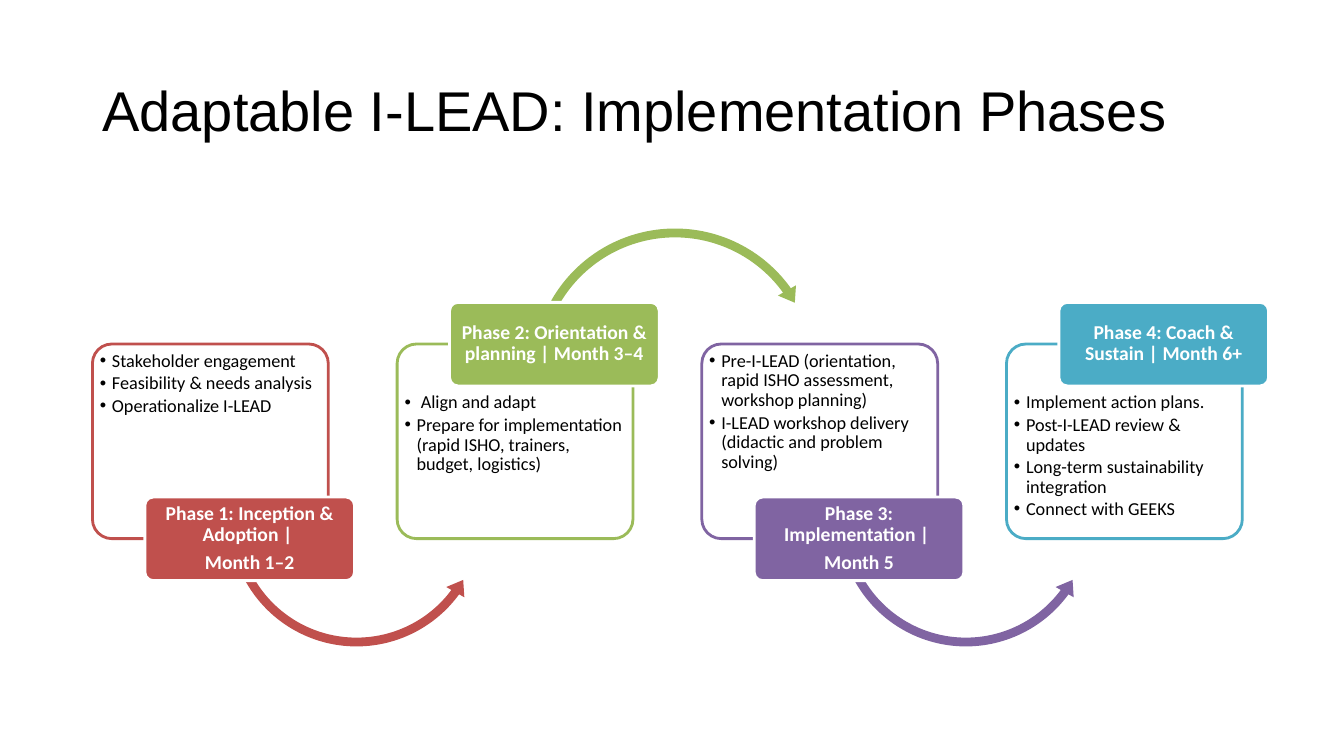
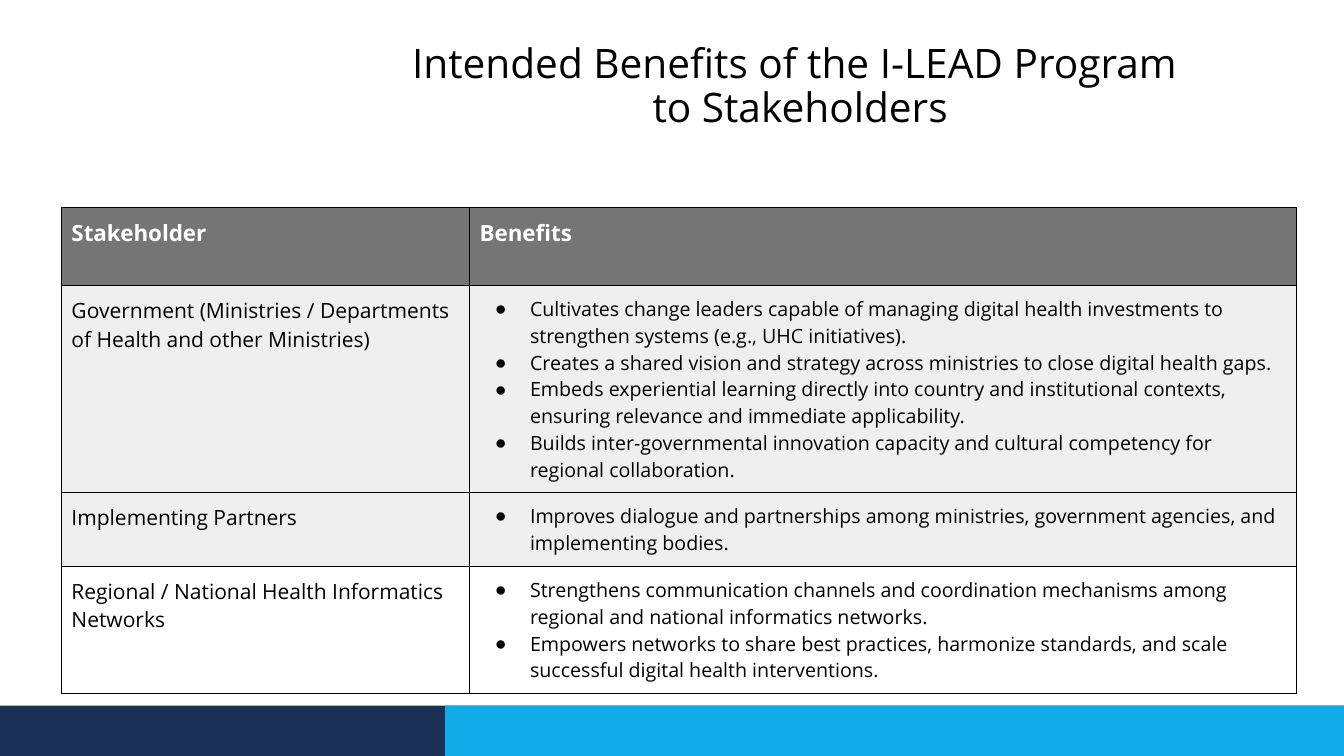
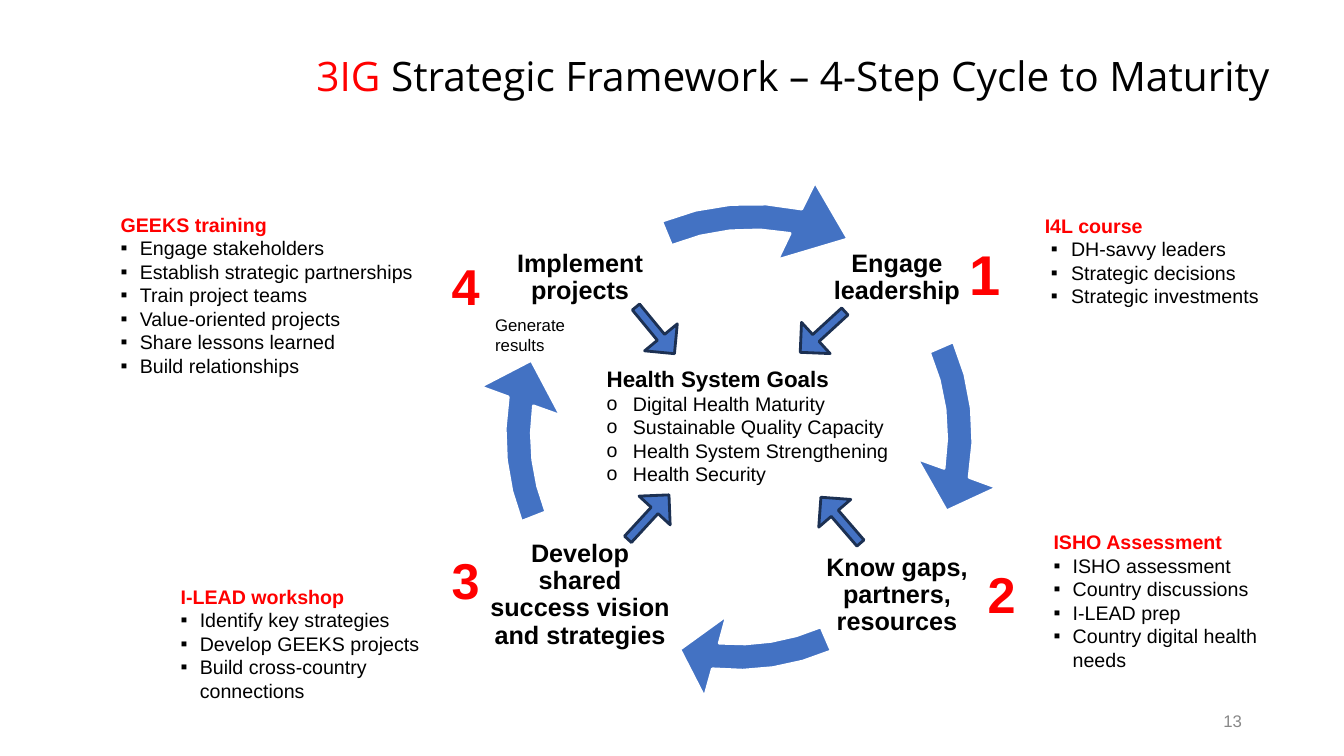
from math import cos, radians, sin

from lxml import etree
from pptx import Presentation
from pptx.dml.color import RGBColor
from pptx.enum.shapes import MSO_SHAPE
from pptx.enum.text import MSO_ANCHOR, PP_ALIGN
from pptx.oxml.ns import qn
from pptx.util import Inches, Pt

RECTANGLE = MSO_SHAPE.RECTANGLE
ROUNDED = MSO_SHAPE.ROUNDED_RECTANGLE
RIGHT_ARROW = MSO_SHAPE.RIGHT_ARROW
ARC_OVER = MSO_SHAPE.CIRCULAR_ARROW
ARC_UNDER = MSO_SHAPE.LEFT_CIRCULAR_ARROW
TOP, MIDDLE, BOTTOM = MSO_ANCHOR.TOP, MSO_ANCHOR.MIDDLE, MSO_ANCHOR.BOTTOM
LEFT, CENTER, RIGHT = PP_ALIGN.LEFT, PP_ALIGN.CENTER, PP_ALIGN.RIGHT

WIDTH, HEIGHT = Inches(13.33), Inches(7.5)
COLOURS = {
    "black": "000000", "white": "FFFFFF", "red": "FF0000", "number": "888888",
    "phase 1": "C0504D", "phase 2": "9BBB59", "phase 3": "8064A2", "phase 4": "4BACC6",
    "navy": "1B3055", "sky": "10ABE9", "header": "757575", "row": "EFEFEF",
    "ring": "4372C3", "cycle": "4472C4", "outline": "1C3052",
}
INSETS = (0.1, 0.05, 0.1, 0.05)


# ---- shared helpers: all places are percentages of the slide ----

def colour(name):
    return RGBColor.from_string(COLOURS[name])


def across(share):
    return round(WIDTH * share / 100)


def down(share):
    return round(HEIGHT * share / 100)


def place(left, top, width, height):
    return across(left), down(top), across(width), down(height)


def set_margins(holder, insets):
    (holder.margin_left, holder.margin_top,
     holder.margin_right, holder.margin_bottom) = map(Inches, insets)


def set_frame(frame, anchor=TOP, insets=INSETS):
    frame.word_wrap = True
    frame.vertical_anchor = anchor
    set_margins(frame, insets)


def style(para, size, font="Arial", ink="black", bold=False, align=LEFT,
          spacing=1.0, after=0):
    para.alignment = align
    para.line_spacing = spacing
    para.space_after = Pt(after)
    for span in para.runs:
        span.font.size = Pt(size)
        span.font.name = font
        span.font.bold = bold
        span.font.color.rgb = colour(ink)


def add_bullet(para, mark, indent, hang):
    props = para._p.get_or_add_pPr()
    props.set("marL", str(Inches(indent)))
    props.set("indent", str(-Inches(hang)))
    etree.SubElement(props, qn("a:buFont")).set("typeface", "Arial")
    etree.SubElement(props, qn("a:buChar")).set("char", mark)


def write(frame, lines, size, bullet=None, **look):
    frame.text = "\n".join(lines)
    for para in frame.paragraphs:
        style(para, size, **look)
        if bullet:
            add_bullet(para, *bullet)


def add_text(page, at, lines, size, anchor=TOP, insets=INSETS, **look):
    box = page.shapes.add_textbox(*place(*at))
    set_frame(box.text_frame, anchor, insets)
    write(box.text_frame, lines, size, **look)
    return box


def set_fill(fill, name):
    if name:
        fill.solid()
        fill.fore_color.rgb = colour(name)
    else:
        fill.background()


def paint(shape, fill=None, line=None):
    shape.shadow.inherit = False
    set_fill(shape.fill, fill)
    set_fill(shape.line.fill, line)
    if line:
        shape.line.width = Pt(2)


def add_block(page, kind, at, fill, line=None, adjust=()):
    block = page.shapes.add_shape(kind, *place(*at))
    paint(block, fill, line)
    for index, percent in enumerate(adjust):
        block.adjustments[index] = percent / 100
    return block


def add_outline(page, points):
    builder = page.shapes.build_freeform(*points[0])
    builder.add_line_segments(points[1:], close=True)
    return builder.convert_to_shape()


def add_title(page, at, text, size=29, font="Open Sans", anchor=MIDDLE, align=LEFT):
    return add_text(page, at, [text], size, anchor, font=font, align=align, spacing=0.9)


# ---- phases ----

PHASES = [
    (["Phase 1: Inception & Adoption | ", "Month 1–2"],
     ["Stakeholder engagement", "Feasibility & needs analysis", "Operationalize I-LEAD"]),
    (["Phase 2: Orientation & planning | Month 3–4"],
     [" Align and adapt",
      "Prepare for implementation (rapid ISHO, trainers, budget, logistics)"]),
    (["Phase 3: Implementation | ", "Month 5"],
     ["Pre-I-LEAD (orientation, rapid ISHO assessment, workshop planning)",
      "I-LEAD workshop delivery (didactic and problem solving)"]),
    (["Phase 4: Coach & Sustain | Month 6+"],
     ["Implement action plans.", "Post-I-LEAD review & updates",
      "Long-term sustainability integration", "Connect with GEEKS"]),
]


def add_phase(page, index, label, tasks):
    left = 6.88 + index * 22.67
    ink = f"phase {index + 1}"
    label_on_top = index % 2 == 1

    panel = add_block(page, ROUNDED, (left, 45.5, 17.55, 25.75), "white", ink, [10])
    panel_colour = panel.fill._xPr.find(qn("a:solidFill"))[0]
    etree.SubElement(panel_colour, qn("a:alpha"), val="90000")
    tasks_top = 51.6 if label_on_top else 46.1
    add_text(page, (left + 0.33, tasks_top, 16.9, 19.1), tasks, 13, insets=(0.03,) * 4,
             bullet=("•", 0.12, 0.12), font="Calibri", spacing=0.9, after=2)

    # The last phase leads nowhere
    if index < len(PHASES) - 1:
        if label_on_top:
            add_block(page, ARC_OVER, (left + 9.65, 29.45, 22.05, 39.2), ink,
                      adjust=[3, 363.7, 19460.8, 12575.5, 3.5])
        else:
            add_block(page, ARC_UNDER, (left + 9.75, 51.1, 19.8, 35.2), ink,
                      adjust=[3.3, 408.4, 2183.9, 9024.5, 3.9])

    tag_top = 40 if label_on_top else 65.75
    add_block(page, ROUNDED, (left + 3.9, tag_top, 15.6, 11.05), ink, "white", [10])
    add_text(page, (left + 4.1, tag_top + 0.3, 15.2, 10.4), label, 14, MIDDLE,
             (0.03, 0.02, 0.03, 0.02), font="Calibri", ink="white", bold=True,
             align=CENTER, spacing=0.9, after=5)


def build_phases(page):
    add_title(page, (6.88, 5.3, 86.2, 19.3), "Adaptable I-LEAD: Implementation Phases",
              size=40, font="Arial")
    for index, (label, tasks) in enumerate(PHASES):
        add_phase(page, index, label, tasks)


# ---- benefits table ----

BENEFITS = [
    ("Government (Ministries / Departments of Health and other Ministries)", [
        "Cultivates change leaders capable of managing digital health investments to "
        "strengthen systems (e.g., UHC initiatives).",
        "Creates a shared vision and strategy across ministries to close digital health gaps.",
        "Embeds experiential learning directly into country and institutional contexts, "
        "ensuring relevance and immediate applicability.",
        "Builds inter-governmental innovation capacity and cultural competency for "
        "regional collaboration."]),
    ("Implementing Partners", [
        "Improves dialogue and partnerships among ministries, government agencies, and "
        "implementing bodies."]),
    ("Regional / National Health Informatics Networks", [
        "Strengthens communication channels and coordination mechanisms among regional "
        "and national informatics networks.",
        "Empowers networks to share best practices, harmonize standards, and scale "
        "successful digital health interventions."]),
]
COLUMN_SHARES = [30.37, 61.55]
ROW_SHARES = [10.35, 27.35, 9.8, 16.8]


def add_borders(cell):
    props = cell._tc.get_or_add_tcPr()
    for side in ("lnL", "lnR", "lnT", "lnB"):
        line = etree.SubElement(props, qn(f"a:{side}"), w=str(Pt(0.75)))
        fill = etree.SubElement(line, qn("a:solidFill"))
        etree.SubElement(fill, qn("a:srgbClr"), val=COLOURS["black"])


def fill_cell(cell, lines, size, fill, **look):
    add_borders(cell)
    set_fill(cell.fill, fill)
    set_margins(cell, (0.1,) * 4)
    write(cell.text_frame, lines, size, font="Open Sans", **look)


def build_benefits(page):
    add_title(page, (21.4, 3.3, 76.3, 14.75),
              "Intended Benefits of the I-LEAD Program \vto Stakeholders",
              anchor=BOTTOM, align=CENTER)
    # Footer band
    add_block(page, RECTANGLE, (0, 93.33, 100, 6.67), "navy")
    add_block(page, RECTANGLE, (33.12, 93.33, 66.88, 6.67), "sky")

    at = place(4.57, 27.45, sum(COLUMN_SHARES), sum(ROW_SHARES))
    table = page.shapes.add_table(len(ROW_SHARES), len(COLUMN_SHARES), *at).table
    table.horz_banding = False
    for column, share in zip(table.columns, COLUMN_SHARES):
        column.width = across(share)
    for row, share in zip(table.rows, ROW_SHARES):
        row.height = down(share)

    for index, heading in enumerate(["Stakeholder", "Benefits"]):
        fill_cell(table.cell(0, index), [heading], 16, "header", ink="white", bold=True)
    for row, (stakeholder, benefits) in enumerate(BENEFITS, 1):
        fill = "row" if row < len(BENEFITS) else None
        fill_cell(table.cell(row, 0), [stakeholder], 15, fill)
        fill_cell(table.cell(row, 1), benefits, 14, fill, bullet=("●", 0.5, 0.35))


# ---- four-step cycle ----

# Label, its left and top, number, number place, number size
STEPS = [
    ("Engage leadership", 59.8, 24.4, "1", (71.4, 31.05, 3.75, 10.3), 40),
    ("Know gaps, partners, resources", 59.8, 66.4, "2", (72.75, 73.85, 3.3, 9.5), 36),
    ("Develop shared success vision and strategies", 36.22, 66.4, "3",
     (32.87, 72, 3.3, 9.5), 36),
    ("Implement projects", 36.22, 24.4, "4", (32.87, 33.1, 3.3, 9.5), 36),
]
# Place, bullet, heading, items
LISTS = [
    ((77, 27.6, 17.5, 13.9), ("▪", 0.26, 0.2), "I4L course",
     ["DH-savvy leaders", "Strategic decisions", "Strategic investments"]),
    ((77.65, 69.45, 18.4, 21.1), ("▪", 0.19, 0.19), "ISHO Assessment",
     ["ISHO assessment", "Country discussions", "I-LEAD prep",
      "Country digital health needs"]),
    ((12.7, 76.7, 20.2, 17.1), ("▪", 0.19, 0.19), "I-LEAD workshop",
     ["Identify key strategies", "Develop GEEKS projects",
      "Build cross-country connections"]),
    ((8.24, 27.45, 31.2, 23.3), ("▪", 0.19, 0.19), "GEEKS training",
     ["Engage stakeholders", "Establish strategic partnerships", "Train project teams",
      "Value-oriented projects", "Share lessons learned", "Build relationships"]),
]
GOALS = ["Digital Health Maturity", "Sustainable Quality Capacity",
         "Health System Strengthening", "Health Security"]
# Centre in inches, tail and tip angles in degrees, head length factor
RING_ARROWS = [
    (7.32, 4.32, -23.5, 19.9, 1),
    (7.32, 4.32, 66.6, 105.2, 0.93),
    (7.34, 4.32, 158.5, 199.8, 1.08),
    (7.45, 4.35, 247.6, 295.9, 1.4),
]
RING_TOP, RING_SIDE = 1.71, 5.23
# Left, top, rotation
GOAL_ARROWS = [(46.5, 40.9, 50.5), (58.95, 41.1, 137.5), (60.3, 66, 229.2), (46, 65.6, 312.7)]


def arc(radius, start, end, steps=4):
    return [(radius, start + (end - start) * step / steps) for step in range(steps + 1)]


def frame_on_ring(shape, left, top, side):
    """Widen the shape's frame to the whole ring, leaving its outline in place."""
    shift_x, shift_y = shape.left - left, shape.top - top
    outline = shape._element.spPr.find(".//" + qn("a:path"))
    outline.set("w", str(side))
    outline.set("h", str(side))
    for point in outline.iter(qn("a:pt")):
        point.set("x", str(int(point.get("x")) + shift_x))
        point.set("y", str(int(point.get("y")) + shift_y))
    shape.left, shape.top, shape.width, shape.height = left, top, side, side


def add_ring_arrow(page, centre_x, centre_y, tail, tip, head):
    polar = (arc(2.33, tail, tip - 9.6 * head)
             + [(2.62, tip - 8.5 * head), (2.2, tip), (1.79, tip - 12.5 * head)]
             + arc(2.07, tip - 10.8 * head, tail))
    points = [(Inches(centre_x + radius * cos(radians(angle))),
               Inches(centre_y + radius * sin(radians(angle)))) for radius, angle in polar]
    arrow = add_outline(page, points)
    paint(arrow, "ring", "white")
    frame_on_ring(arrow, Inches(centre_x - RING_SIDE / 2), Inches(RING_TOP),
                  Inches(RING_SIDE))


def add_step_label(page, left, top, label):
    x, y, width, height = place(left, top, 13.88, 24.67)
    area = add_outline(page, [(x, y), (x + width, y), (x + width, y + height),
                              (x, y + height)])
    paint(area)
    set_frame(area.text_frame, MIDDLE, (0.02,) * 4)
    write(area.text_frame, [label], 18, bold=True, align=CENTER, spacing=0.9)


def add_list(page, at, bullet, heading, items, size=14, ink="red"):
    box = add_text(page, at, [heading, *items], 14)
    first, *others = box.text_frame.paragraphs
    style(first, size, ink=ink, bold=True)
    for para in others:
        add_bullet(para, *bullet)


def build_cycle(page):
    title = add_title(page, (22.8, 4.98, 72.8, 10.7), "3IG")
    para = title.text_frame.paragraphs[0]
    para.add_run().text = " Strategic Framework – 4-Step Cycle to Maturity"
    style(para, 29, font="Open Sans", spacing=0.9)
    para.runs[0].font.color.rgb = colour("red")

    for arrow in RING_ARROWS:
        add_ring_arrow(page, *arrow)
    for label, left, top, number, number_at, size in STEPS:
        add_step_label(page, left, top, label)
        add_text(page, number_at, [number], size, ink="red", bold=True)
    for entry in LISTS:
        add_list(page, *entry)
    add_text(page, (36.1, 40.95, 10.6, 4), ["Generate results"], 12)

    # Goals in the middle
    add_list(page, (44.4, 47.6, 23.5, 17.5), ("o", 0.26, 0.26), "Health System Goals",
             GOALS, size=16, ink="black")
    for left, top, angle in GOAL_ARROWS:
        arrow = add_block(page, RIGHT_ARROW, (left, top, 4.5, 5.6), "cycle", "outline",
                          [22.2, 50])
        arrow.rotation = angle

    add_text(page, (70.65, 92.7, 22.5, 5.3), ["13"], 12, MIDDLE, ink="number", align=RIGHT)


def main():
    deck = Presentation()
    deck.slide_width, deck.slide_height = WIDTH, HEIGHT
    for build in (build_phases, build_benefits, build_cycle):
        build(deck.slides.add_slide(deck.slide_layouts[6]))
    deck.save("out.pptx")


if __name__ == "__main__":
    main()
